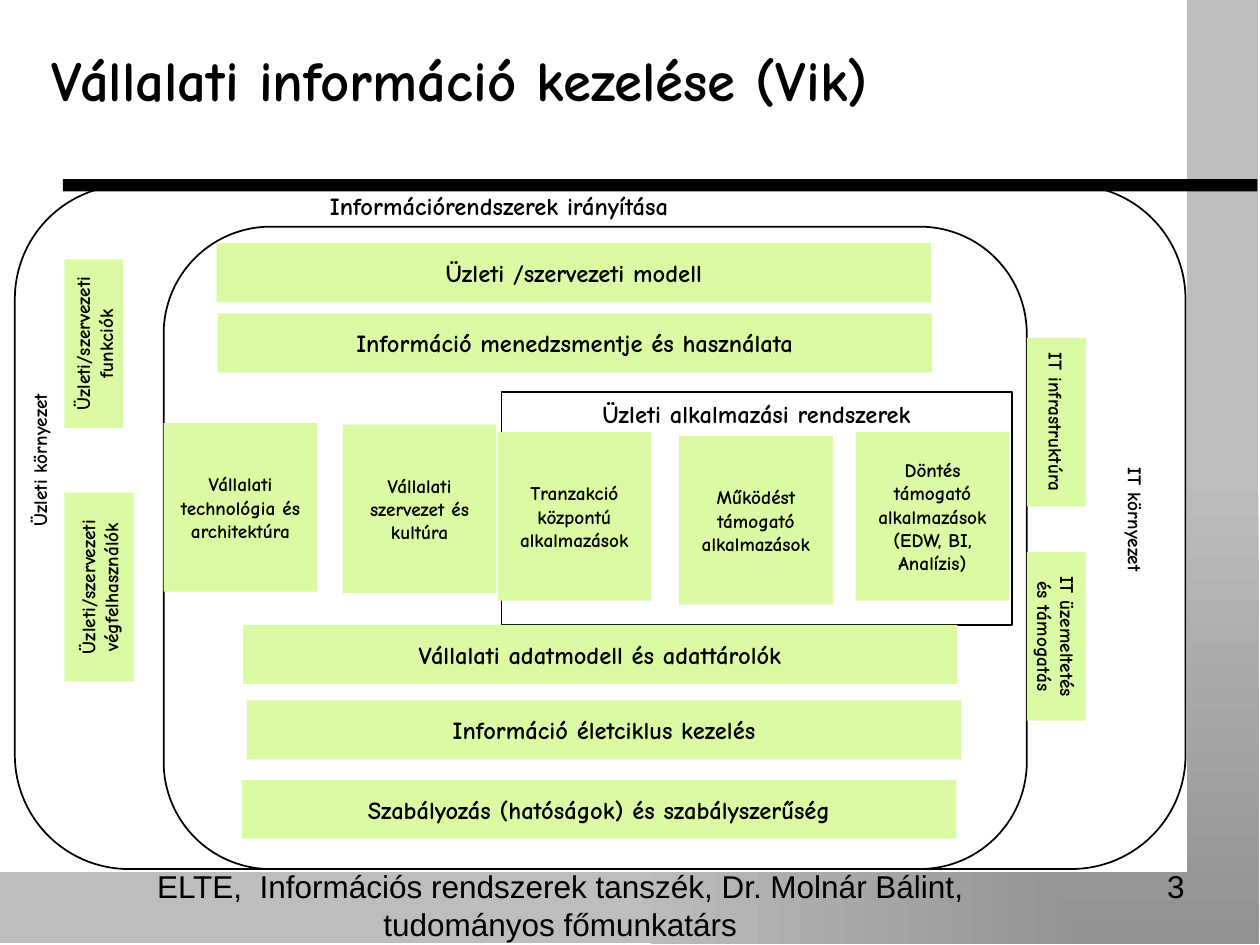
from lxml import etree
from pptx import Presentation
from pptx.dml.color import RGBColor
from pptx.enum.shapes import MSO_SHAPE
from pptx.enum.text import MSO_ANCHOR, PP_ALIGN
from pptx.oxml.ns import qn
from pptx.util import Cm, Pt

BLACK = RGBColor(0x00, 0x00, 0x00)
WHITE = RGBColor(0xFF, 0xFF, 0xFF)
LIME = RGBColor(0xDB, 0xFA, 0xA4)
DARK_GREY = RGBColor(0x91, 0x91, 0x91)
LIGHT_GREY = RGBColor(0xBD, 0xBD, 0xBD)

RECT = MSO_SHAPE.RECTANGLE
ROUNDED = MSO_SHAPE.ROUNDED_RECTANGLE
LEFT, CENTER, RIGHT = PP_ALIGN.LEFT, PP_ALIGN.CENTER, PP_ALIGN.RIGHT
TOP, MIDDLE = MSO_ANCHOR.TOP, MSO_ANCHOR.MIDDLE

HEADING_FONT = "Comic Neue"
FOOTER_FONT = "Arial"
DOWN, UP = "vert", "vert270"

LAYER_SIZE = (14.4, 1.19)
TILE_SIZE = (3.1, 3.4)
SIDE_SIZE = (1.19, 3.4)

UPPER_LAYERS = [
    ("Üzleti /szervezeti modell", 4.37, 4.9),
    ("Információ menedzsmentje és használata", 4.39, 6.32),
]
LOWER_LAYERS = [
    ("Vállalati adatmodell és adattárolók", 4.9, 12.6),
    ("Információ életciklus kezelés", 4.98, 14.12),
    ("Szabályozás (hatóságok) és szabályszerűség", 4.88, 15.72),
]
ENTERPRISE_TILES = [
    ("Vállalati technológia és architektúra", 3.3, 8.53),
    ("Vállalati szervezet és kultúra", 6.91, 8.56),
]
APPLICATION_TILES = [
    ("Tranzakció központú alkalmazások", 10.03, 8.71),
    ("Működést támogató alkalmazások", 13.69, 8.79),
    ("Döntés támogató alkalmazások (EDW, BI, Analízis)", 17.25, 8.71),
]
SIDE_BLOCKS = [
    ("IT infrastruktúra", DOWN, 20.7, 6.81, *SIDE_SIZE),
    ("IT üzemeltetés és támogatás", DOWN, 20.7, 11.13, *SIDE_SIZE),
    ("Üzleti/szervezeti funkciók", UP, 1.3, 5.23, *SIDE_SIZE),
    ("Üzleti/szervezeti végfelhasználók", UP, 1.3, 9.93, 1.4, 3.81),
]
ENVIRONMENTS = [
    ("IT környezet", DOWN, 22.3, 8.13, 1.19, 4.7),
    ("Üzleti környezet", UP, 0.3, 6.93, 0.99, 4.7),
]


def write(frame, text, *, size, font=HEADING_FONT, bold=True,
          align=CENTER, anchor=MIDDLE, direction=None):
    frame.word_wrap = True
    frame.vertical_anchor = anchor
    if direction:
        frame._txBody.bodyPr.set("vert", direction)
    paragraph = frame.paragraphs[0]
    paragraph.alignment = align
    run = paragraph.add_run()
    run.text = text
    run.font.name = font
    run.font.size = Pt(size)
    run.font.bold = bold
    run.font.color.rgb = BLACK


def add_label(slide, text, box, **text_format):
    label = slide.shapes.add_textbox(*map(Cm, box))
    write(label.text_frame, text, **text_format)


def add_panel(slide, box, fill=None, outlined=False, kind=RECT):
    panel = slide.shapes.add_shape(kind, *map(Cm, box))
    panel.shadow.inherit = False
    if fill is None:
        panel.fill.background()
    else:
        panel.fill.solid()
        panel.fill.fore_color.rgb = fill
    if outlined:
        panel.line.color.rgb = BLACK
        panel.line.width = Pt(1)
    else:
        panel.line.fill.background()
    return panel


def add_block(slide, text, box, **text_format):
    block = add_panel(slide, box, LIME)
    write(block.text_frame, text, **text_format)


def add_blocks(slide, items, block_size, text_size):
    for text, left, top in items:
        add_block(slide, text, (left, top, *block_size), size=text_size)


def shade_toward_corner(panel):
    panel.fill.gradient()
    for stop, colour in zip(panel.fill.gradient_stops, (DARK_GREY, LIGHT_GREY)):
        stop.color.rgb = colour
    gradient = panel._element.spPr.find(qn("a:gradFill"))
    gradient.remove(gradient.find(qn("a:lin")))
    corner = etree.SubElement(gradient, qn("a:path"), path="rect")
    etree.SubElement(corner, qn("a:fillToRect"), l="100000", t="100000")


def add_backdrop(slide):
    shade_toward_corner(add_panel(slide, (0, 0, 25.37, 19.02), LIGHT_GREY))
    add_panel(slide, (0, 0, 23.93, 17.58), WHITE)
    add_panel(slide, (1.27, 3.61, 24.08, 0.25), BLACK)


def add_footer(slide):
    footer_format = dict(size=18, font=FOOTER_FONT, bold=False, anchor=TOP)
    add_label(slide,
              "ELTE,  Információs rendszerek tanszék, Dr. Molnár Bálint, "
              "tudományos főmunkatárs",
              (1.3, 17.35, 19.99, 1.32), **footer_format)
    add_label(slide, "3", (18.21, 17.35, 5.92, 1.32), align=RIGHT, **footer_format)


def main():
    deck = Presentation()
    deck.slide_width, deck.slide_height = Cm(25.4), Cm(19.05)
    slide = deck.slides.add_slide(deck.slide_layouts[6])

    add_backdrop(slide)
    add_footer(slide)
    add_label(slide, "Vállalati információ kezelése (Vik)",
              (0, 0, 18.54, 3.18), size=32.4)

    for box in [(0.3, 3.73, 23.6, 13.79), (3.3, 4.57, 17.4, 12.95)]:
        add_panel(slide, box, outlined=True, kind=ROUNDED)
    add_label(slide, "Információrendszerek irányítása",
              (6.4, 3.73, 11.71, 0.86), size=14, align=LEFT, anchor=TOP)

    add_blocks(slide, UPPER_LAYERS, LAYER_SIZE, 14)
    add_blocks(slide, ENTERPRISE_TILES, TILE_SIZE, 11)
    for text, direction, *box in SIDE_BLOCKS:
        add_block(slide, text, box, size=11, direction=direction)
    for text, direction, *box in ENVIRONMENTS:
        add_label(slide, text, box, size=11, direction=direction)

    add_panel(slide, (10.11, 7.9, 10.29, 4.7), outlined=True)
    add_label(slide, "Üzleti alkalmazási rendszerek",
              (10.11, 7.92, 10.29, 0.86), size=14, anchor=TOP)
    add_blocks(slide, APPLICATION_TILES, TILE_SIZE, 11)
    add_blocks(slide, LOWER_LAYERS, LAYER_SIZE, 14)

    deck.save("out.pptx")


if __name__ == "__main__":
    main()
